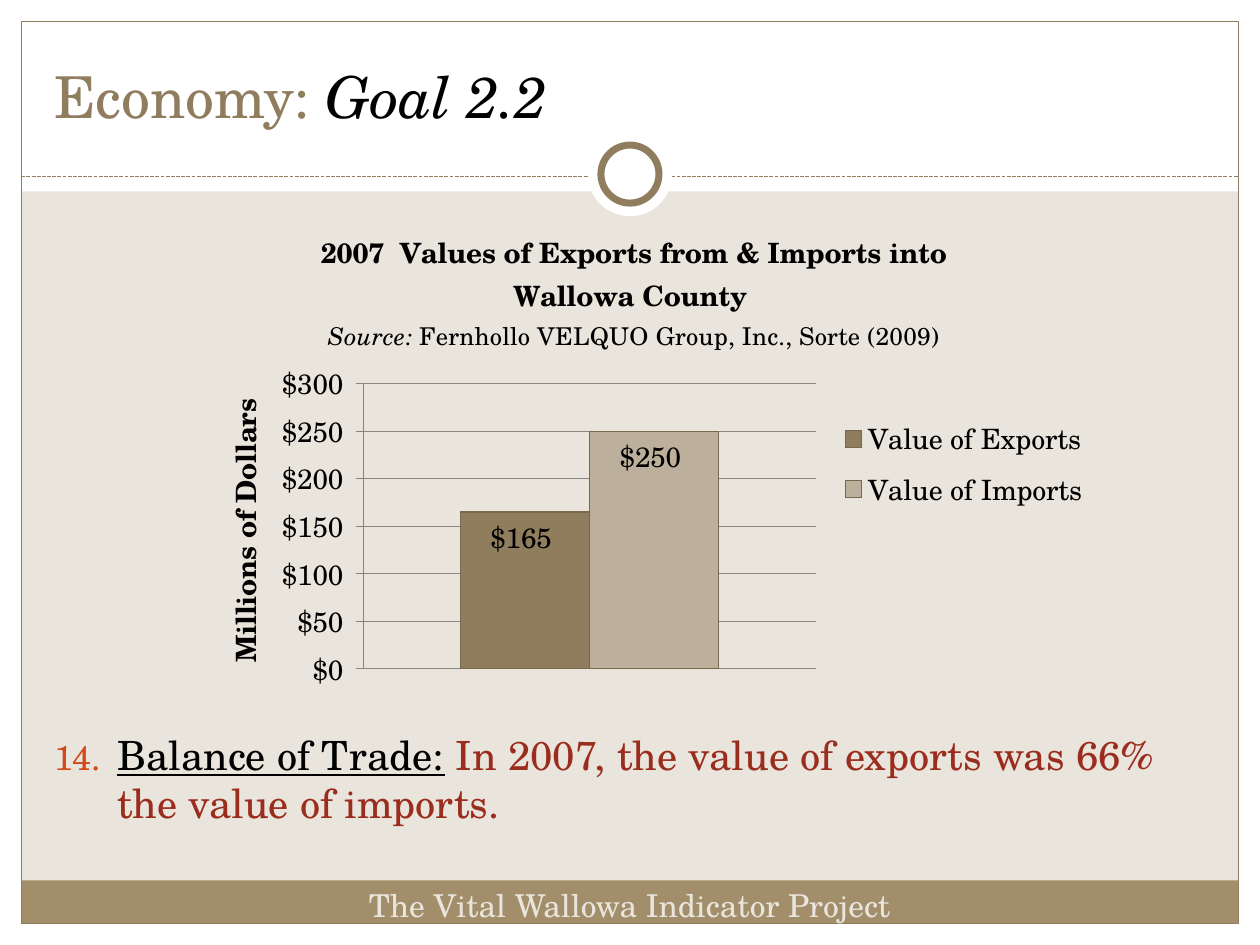
from pptx import Presentation
from pptx.chart.data import CategoryChartData
from pptx.dml.color import RGBColor
from pptx.enum.chart import XL_CHART_TYPE, XL_LABEL_POSITION, XL_LEGEND_POSITION, XL_TICK_MARK
from pptx.enum.dml import MSO_LINE
from pptx.enum.shapes import MSO_CONNECTOR, MSO_SHAPE
from pptx.enum.text import MSO_ANCHOR, PP_ALIGN
from pptx.oxml.ns import qn
from pptx.util import Cm, Pt
from lxml import etree

RECTANGLE, OVAL = MSO_SHAPE.RECTANGLE, MSO_SHAPE.OVAL
STRAIGHT, DASH = MSO_CONNECTOR.STRAIGHT, MSO_LINE.SQUARE_DOT
TOP, BOTTOM = MSO_ANCHOR.TOP, MSO_ANCHOR.BOTTOM
LEFT, CENTER = PP_ALIGN.LEFT, PP_ALIGN.CENTER
COLUMNS, INSIDE_END = XL_CHART_TYPE.COLUMN_CLUSTERED, XL_LABEL_POSITION.INSIDE_END
LEGEND_RIGHT, TICK_OUT = XL_LEGEND_POSITION.RIGHT, XL_TICK_MARK.OUTSIDE

WHITE = RGBColor(0xFF, 0xFF, 0xFF)
BLACK = RGBColor(0x00, 0x00, 0x00)
SAND = RGBColor(0xE9, 0xE5, 0xDC)
TAN = RGBColor(0xA2, 0x8E, 0x6A)
BROWN = RGBColor(0x8F, 0x7D, 0x5E)
DARK_BROWN = RGBColor(0x78, 0x69, 0x4E)
LIGHT_TAN = RGBColor(0xBC, 0xAF, 0x9B)
GREY = RGBColor(0x86, 0x86, 0x86)
RED = RGBColor(0x9B, 0x2D, 0x1F)

FONT = "TeX Gyre Schola"
DOLLARS = '"$"#,##0_);[Red]\\("$"#,##0\\)'
WIDTH, HEIGHT, MARGIN = 25.4, 19.05, 0.43


class SlideBuilder:
    """Holds the shared style and the slide being built."""

    def __init__(self, slide, font):
        self.slide = slide
        self.font = font

    def format_font(self, font, size, color=BLACK, **values):
        for name, value in {"name": self.font, "size": Pt(size), **values}.items():
            setattr(font, name, value)
        font.color.rgb = color

    def format_line(self, line, color, width):
        line.color.rgb = color
        line.width = Pt(width)

    def shape(self, kind, bounds, fill=None, line=None, width=0.75):
        shape = self.slide.shapes.add_shape(kind, *map(Cm, bounds))
        shape.shadow.inherit = False
        if fill is None:
            shape.fill.background()
        else:
            shape.fill.solid()
            shape.fill.fore_color.rgb = fill
        if line is None:
            shape.line.fill.background()
        else:
            self.format_line(shape.line, line, width)

    def rule(self, left, right, height, color):
        rule = self.slide.shapes.add_connector(
            STRAIGHT, Cm(left), Cm(height), Cm(right), Cm(height))
        self.format_line(rule.line, color, 0.75)
        rule.line.dash_style = DASH
        etree.SubElement(rule._element.spPr, qn("a:effectLst"))

    def spans(self, para, spans):
        for text, values in spans:
            span = para.add_run()
            span.text = text
            self.format_font(span.font, **values)

    def text(self, bounds, spans, anchor=TOP, align=LEFT):
        box = self.slide.shapes.add_textbox(*map(Cm, bounds))
        frame = box.text_frame
        frame.word_wrap = True
        frame.vertical_anchor = anchor
        para = frame.paragraphs[0]
        para.alignment = align
        self.spans(para, spans)
        return para

    def number(self, para, start, color, indent):
        para.space_before = Pt(4.6)
        properties = para._p.get_or_add_pPr()
        properties.set("marL", str(Cm(indent)))
        properties.set("indent", str(-Cm(indent)))
        bullet_color = etree.SubElement(properties, qn("a:buClr"))
        etree.SubElement(bullet_color, qn("a:srgbClr"), val=color)
        etree.SubElement(properties, qn("a:buSzPct"), val="85000")
        etree.SubElement(properties, qn("a:buFont"), typeface=self.font)
        etree.SubElement(properties, qn("a:buAutoNum"), type="arabicPeriod", startAt=str(start))

    def place(self, element, index, **values):
        for old in element.findall(qn("c:layout")):
            element.remove(old)
        layout = etree.Element(qn("c:layout"))
        manual = etree.SubElement(layout, qn("c:manualLayout"))
        for name, value in values.items():
            etree.SubElement(manual, qn(f"c:{name}"), val=str(value))
        element.insert(index, layout)

    def chart(self, bounds, series, title, axis_title):
        data = CategoryChartData(number_format=DOLLARS)
        data.categories = ["1"]
        for name, value, color in series:
            data.add_series(name, [value])
        chart = self.slide.shapes.add_chart(COLUMNS, *map(Cm, bounds), data).chart
        self.format_font(chart.font, 18)

        chart.has_title = True
        frame = chart.chart_title.text_frame
        for position, spans in enumerate(title):
            para = frame.add_paragraph() if position else frame.paragraphs[0]
            self.spans(para, spans)
        self.place(chart.chart_title._element, 1, xMode="edge", yMode="edge", x=0.15, y=0.05)

        plot = chart.plots[0]
        plot.vary_by_categories = False
        plot.gap_width, plot.overlap = 150, 0
        for column, (name, value, color) in zip(plot.series, series):
            column.format.fill.solid()
            column.format.fill.fore_color.rgb = color
            self.format_line(column.format.line, DARK_BROWN, 0.75)
            labels = column.data_labels
            for key, setting in {"show_value": True, "number_format": DOLLARS,
                                 "number_format_is_linked": False,
                                 "position": INSIDE_END}.items():
                setattr(labels, key, setting)
            self.format_font(labels.font, 16)
        self.place(chart._chartSpace.xpath("c:chart/c:plotArea")[0], 0, layoutTarget="inner",
                   xMode="edge", yMode="edge", x=0.2, y=0.37, w=0.49, h=0.57)

        chart.category_axis.visible = False
        axis = chart.value_axis
        axis.minimum_scale, axis.maximum_scale, axis.major_unit = 0, 300, 50
        axis.major_tick_mark = TICK_OUT
        axis.tick_labels.number_format = DOLLARS
        axis.tick_labels.number_format_is_linked = False
        self.format_font(axis.tick_labels.font, 16)
        for line in (axis.format.line, axis.major_gridlines.format.line):
            self.format_line(line, GREY, 0.75)
        frame = axis.axis_title.text_frame
        frame._txBody.find(qn("a:bodyPr")).set("rot", "-5400000")
        self.spans(frame.paragraphs[0], [(axis_title, {"size": 16, "bold": True})])
        self.place(axis.axis_title._element, 1, xMode="edge", yMode="edge", x=0.04, y=0.39)

        chart.has_legend = True
        chart.legend.position = LEGEND_RIGHT
        chart.legend.include_in_layout = False
        self.format_font(chart.legend.font, 16)
        self.place(chart.legend._element, 1, xMode="edge", yMode="edge",
                   x=0.71, y=0.42, w=0.28, h=0.22)


def main():
    deck = Presentation()
    deck.slide_width, deck.slide_height = Cm(WIDTH), Cm(HEIGHT)
    page = deck.slides.add_slide(deck.slide_layouts[6])
    page.background.fill.solid()
    page.background.fill.fore_color.rgb = SAND
    builder = SlideBuilder(page, FONT)

    inner_width, inner_height = WIDTH - 2 * MARGIN, HEIGHT - 2 * MARGIN
    for bounds in ((0, HEIGHT - MARGIN, WIDTH, MARGIN), (0, 0, WIDTH, 3.86),
                   (0, 0, MARGIN, HEIGHT), (WIDTH - MARGIN, 0, MARGIN, HEIGHT)):
        builder.shape(RECTANGLE, bounds, WHITE)
    builder.shape(RECTANGLE, (MARGIN, 17.75, inner_width, 0.87), TAN)
    builder.shape(RECTANGLE, (MARGIN, MARGIN, inner_width, inner_height), line=BROWN)
    builder.rule(MARGIN, WIDTH - MARGIN, 3.56, BROWN)
    for size, line in ((1.7, None), (1.17, BROWN)):
        builder.shape(OVAL, ((WIDTH - size) / 2, 3.51 - size / 2, size, size), WHITE, line, 4)

    finding = builder.text((0.84, 14.6, 23.62, 2.97), [
        ("Balance of Trade:", {"size": 23, "underline": True}),
        (" ", {"size": 23}),
        ("In 2007, the value of exports was 66% the value of imports.",
         {"size": 23, "color": RED})])
    builder.number(finding, 14, "D34817", 1.27)
    builder.text((0.84, 0.64, 23.7, 2.11), [
        ("Economy: ", {"size": 33, "color": BROWN}),
        ("Goal 2.2", {"size": 33, "italic": True})], anchor=BOTTOM)
    builder.text((6.98, 17.73, 11.43, 1.02), [
        ("The Vital Wallowa Indicator Project", {"size": 18, "color": SAND})], align=CENTER)

    builder.chart(
        (3.6, 4.01, 18.62, 10.08),
        [("Value of Exports", 165, BROWN), ("Value of Imports", 250, LIGHT_TAN)],
        [[("2007  Values of Exports from & Imports into Wallowa County ",
           {"size": 16, "bold": True})],
         [("Source:", {"size": 14, "bold": False, "italic": True}),
          (" Fernhollo VELQUO Group, Inc., Sorte (2009)", {"size": 14, "bold": False})]],
        "Millions of Dollars")
    deck.save("out.pptx")


if __name__ == "__main__":
    main()
